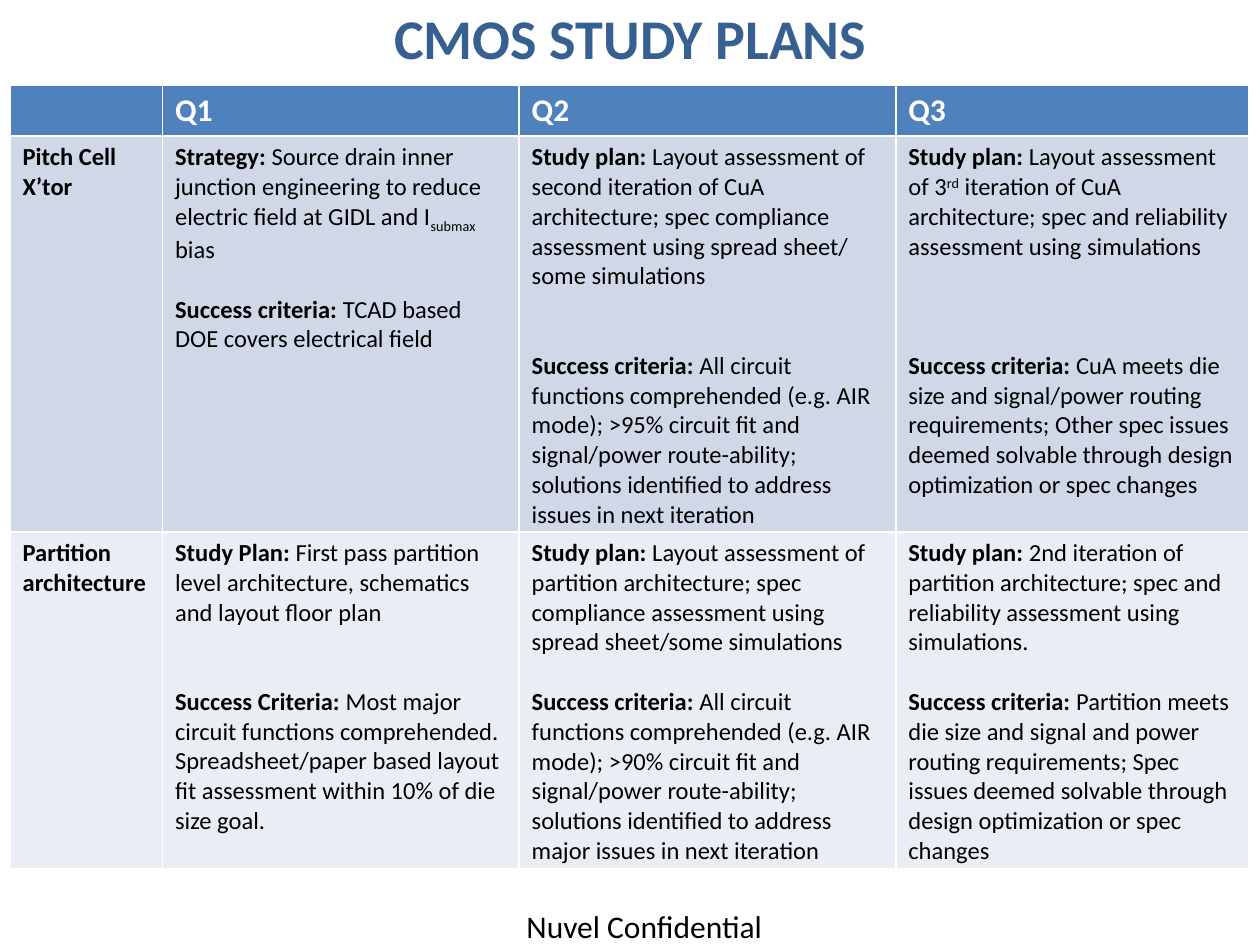
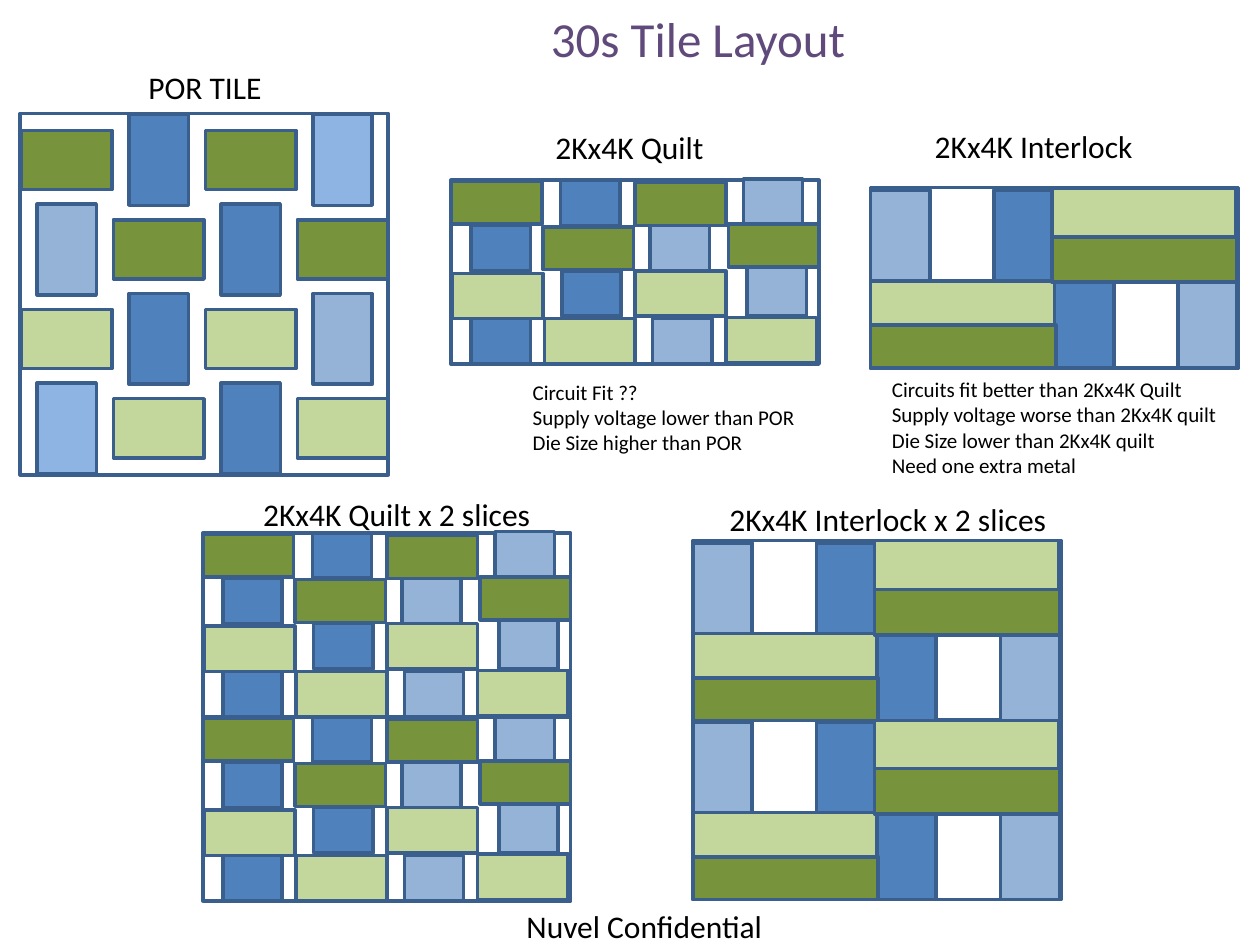
from pptx import Presentation
from pptx.dml.color import RGBColor
from pptx.enum.shapes import MSO_SHAPE as Shape
from pptx.enum.text import PP_ALIGN as Align
from pptx.util import Inches, Pt

FONT = "Calibri"
BLACK, WHITE, EDGE = "000000", "FFFFFF", "3A5F8C"
HEAD, BANDS = "4F81BD", ("D0D8E8", "E9EDF4")
TINTS = {"green": "77933C", "lime": "C3D69B", "blue": "4F81BD",
         "pale": "95B3D7", "sky": "8EB4E3"}
LINE = 17  # height of one 14 pt text line, in points
BASE = {"sub": "-25000", "sup": "30000"}


def color(code):
    return RGBColor.from_string(code)


class Deck:
    """Holds the shared style and the current slide."""

    def __init__(self):
        self.prs = Presentation()
        self.prs.slide_width, self.prs.slide_height = Inches(10), Inches(7.5)
        self.slide = None

    def page(self):
        self.slide = self.prs.slides.add_slide(self.prs.slide_layouts[6])
        self.text(4.08, 7.15, 2.61, 0.4, ["Nuvel Confidential"])

    def run(self, para, words, size, tint=BLACK, bold=False, base=None):
        run = para.add_run()
        run.text = words
        font = run.font
        font.name, font.size, font.bold = FONT, Pt(size), bold
        font.color.rgb = color(tint)
        if base:
            run._r.get_or_add_rPr().set("baseline", BASE[base])

    def text(self, x, y, w, h, lines, size=18, tint=BLACK, bold=False,
             align=Align.LEFT):
        box = self.slide.shapes.add_textbox(*map(Inches, (x, y, w, h)))
        frame = box.text_frame
        frame.word_wrap = True
        for i, line in enumerate(lines):
            para = frame.add_paragraph() if i else frame.paragraphs[0]
            para.alignment = align
            self.run(para, line, size, tint, bold)

    def title(self, x, y, w, h, words, size, tint, bold=False):
        self.text(x, y, w, h, [words], size, tint, bold, Align.CENTER)

    def rect(self, x, y, w, h, tint=None):
        box = self.slide.shapes.add_shape(
            Shape.RECTANGLE, *map(Inches, (x, y, w, h)))
        box.shadow.inherit = False
        box.line.color.rgb, box.line.width = color(EDGE), Pt(2)
        if tint:
            box.fill.solid()
            box.fill.fore_color.rgb = color(tint)
        else:
            box.fill.background()

    def tile(self, x, y, w, h, parts):
        """A frame with groups of equal blocks, placed from its corner."""
        self.rect(x, y, w, h)
        for name, bw, bh, spots in parts:
            for dx, dy in spots:
                self.rect(x + dx, y + dy, bw, bh, TINTS[name])

    def cell(self, cell, fill, paras, size=14, tint=BLACK):
        cell.fill.solid()
        cell.fill.fore_color.rgb = color(fill)
        for i, (gap, runs) in enumerate(paras):
            frame = cell.text_frame
            para = frame.add_paragraph() if i else frame.paragraphs[0]
            para.space_before = Pt(gap * LINE)
            for words, style in runs:
                self.run(para, words, size, tint, style == "bold",
                         style if style in BASE else None)

    def table(self, x, y, cols, rows, heads, body):
        grid = self.slide.shapes.add_table(
            len(rows), len(cols), Inches(x), Inches(y),
            Inches(sum(cols)), Inches(sum(rows))).table
        for col, w in zip(grid.columns, cols):
            col.width = Inches(w)
        for row, h in zip(grid.rows, rows):
            row.height = Inches(h)
        for c, head in enumerate(heads):
            paras = [(0, [(head, "bold")])] if head else []
            self.cell(grid.cell(0, c), HEAD, paras, 18, WHITE)
        for r, row in enumerate(body):
            for c, paras in enumerate(row):
                self.cell(grid.cell(r + 1, c), BANDS[r % 2], paras)


def topic(head, *rest, gap=0):
    """A paragraph with a bold head; rest holds strings or (text, style)."""
    runs = [(part, "") if isinstance(part, str) else part for part in rest]
    return gap, [(head, "bold"), *runs]


# Study plans, one row per work area
PLANS = [
    [[topic("Pitch Cell X’tor")],
     [topic("Strategy: ", "Source drain inner junction engineering to reduce "
            "electric field at GIDL and I", ("submax", "sub"), " bias"),
      topic("Success criteria: ", "TCAD based DOE covers electrical field",
            gap=1)],
     [topic("Study plan: ", "Layout assessment of second iteration of CuA "
            "architecture; spec compliance assessment using spread sheet/ "
            "some simulations"),
      topic("Success criteria: ", "All circuit functions comprehended (e.g. "
            "AIR mode); >95% circuit fit and signal/power route-ability; "
            "solutions identified to address issues in next iteration",
            gap=2)],
     [topic("Study plan: ", "Layout assessment of 3", ("rd", "sup"),
            " iteration of CuA architecture; spec and reliability "
            "assessment using simulations"),
      topic("Success criteria: ", "CuA meets die size and signal/power "
            "routing requirements; Other spec issues deemed solvable through "
            "design optimization or spec changes", gap=3)]],
    [[topic("Partition architecture")],
     [topic("Study Plan: ", "First pass partition level architecture, "
            "schematics and layout floor plan"),
      topic("Success Criteria: ", "Most major circuit functions comprehended. "
            "Spreadsheet/paper based layout fit assessment within 10% of die "
            "size goal.", gap=2)],
     [topic("Study plan: ", "Layout assessment of partition architecture; "
            "spec compliance assessment using spread sheet/some simulations"),
      topic("Success criteria: ", "All circuit functions comprehended (e.g. "
            "AIR mode); >90% circuit fit and signal/power route-ability; "
            "solutions identified to address major issues in next iteration",
            gap=1)],
     [topic("Study plan: ", "2nd iteration of partition architecture; spec "
            "and reliability assessment using simulations."),
      topic("Success criteria: ", "Partition meets die size and signal and "
            "power routing requirements; Spec issues deemed solvable through "
            "design optimization or spec changes", gap=1)]],
]

# Blocks of each tile: tint, width, height, offsets from the tile corner
QUILT = [
    ("green", 0.72, 0.34, [(0, 0.01), (1.46, 0.02), (0.73, 0.37), (2.2, 0.35)]),
    ("blue", 0.47, 0.36, [(0.87, 0), (0.16, 0.36), (0.88, 0.72), (0.16, 1.1)]),
    ("lime", 0.72, 0.36, [(0.01, 0.74), (1.46, 0.72), (0.74, 1.1),
                          (2.18, 1.09)]),
    ("pale", 0.47, 0.36, [(2.32, -0.01), (1.58, 0.36), (1.6, 1.1)]),
    ("pale", 0.47, 0.39, [(2.35, 0.69)]),
]
LOCK = [
    ("blue", 0.47, 0.72, [(0.98, 0.02)]),
    ("pale", 0.47, 0.72, [(0, 0.02)]),
    ("blue", 0.47, 0.69, [(1.46, 0.74)]),
    ("pale", 0.47, 0.69, [(2.44, 0.74)]),
    ("lime", 1.46, 0.36, [(0, 0.74)]),
    ("green", 1.47, 0.34, [(0, 1.09)]),
    ("lime", 1.46, 0.39, [(1.44, 0)]),
    ("green", 1.47, 0.36, [(1.44, 0.39)]),
]
# The POR tile weaves wide green and tall blue blocks on a square grid
POR = ["green blue green sky", "pale green blue green",
       "lime blue lime pale", "sky lime blue lime"]


def weave(rows):
    parts = []
    for r, row in enumerate(rows):
        for c, name in enumerate(row.split()):
            w, h = (0.72, 0.47) if name in ("green", "lime") else (0.47, 0.72)
            spot = (0.37 + 0.73 * c - w / 2, 0.37 + 0.71 * r - h / 2)
            parts.append((name, w, h, [spot]))
    return parts


def plans(deck):
    deck.page()
    deck.title(0.22, -0.02, 9.57, 0.61, "CMOS STUDY PLANS", 32, "376092", True)
    deck.table(0.08, 0.68, (1.21, 2.83, 2.99, 2.8), (0.4, 3.1, 2.65),
               ("", "Q1", "Q2", "Q3"), PLANS)


def tiles(deck):
    deck.page()
    deck.title(1.16, 0.02, 8.76, 0.57, "30s Tile Layout", 28, "604A7B")

    # Tiles, the lower ones as two stacked slices
    deck.tile(0.16, 0.9, 2.92, 2.87, weave(POR))
    for x, y in ((3.58, 1.43), (1.61, 5.69), (1.61, 4.23)):
        deck.tile(x, y, 2.92, 1.46, QUILT)
    for x, y in ((6.91, 1.49), (5.5, 5.71), (5.5, 4.29)):
        deck.tile(x, y, 2.92, 1.43, LOCK)

    # Tile names
    for x, y, w, name in (
            (1.08, 0.49, 1.57, "POR TILE"),
            (4.31, 0.97, 1.91, "2Kx4K Quilt"),
            (7.32, 0.96, 1.91, "2Kx4K Interlock"),
            (1.99, 3.88, 2.35, "2Kx4K Quilt x 2 slices"),
            (5.69, 3.92, 2.79, "2Kx4K Interlock x 2 slices")):
        deck.text(x, y, w, 0.4, [name])

    # Findings
    deck.text(4.13, 2.96, 2.33, 0.71, [
        "Circuit Fit ??", "Supply voltage lower than POR",
        "Die Size higher than POR"], 12)
    deck.text(6.98, 2.94, 2.85, 0.91, [
        "Circuits fit better than 2Kx4K Quilt",
        "Supply voltage worse than 2Kx4K quilt",
        "Die Size lower than 2Kx4K quilt", "Need one extra metal"], 12)


def main():
    deck = Deck()
    plans(deck)
    tiles(deck)
    deck.prs.save("out.pptx")


if __name__ == "__main__":
    main()
